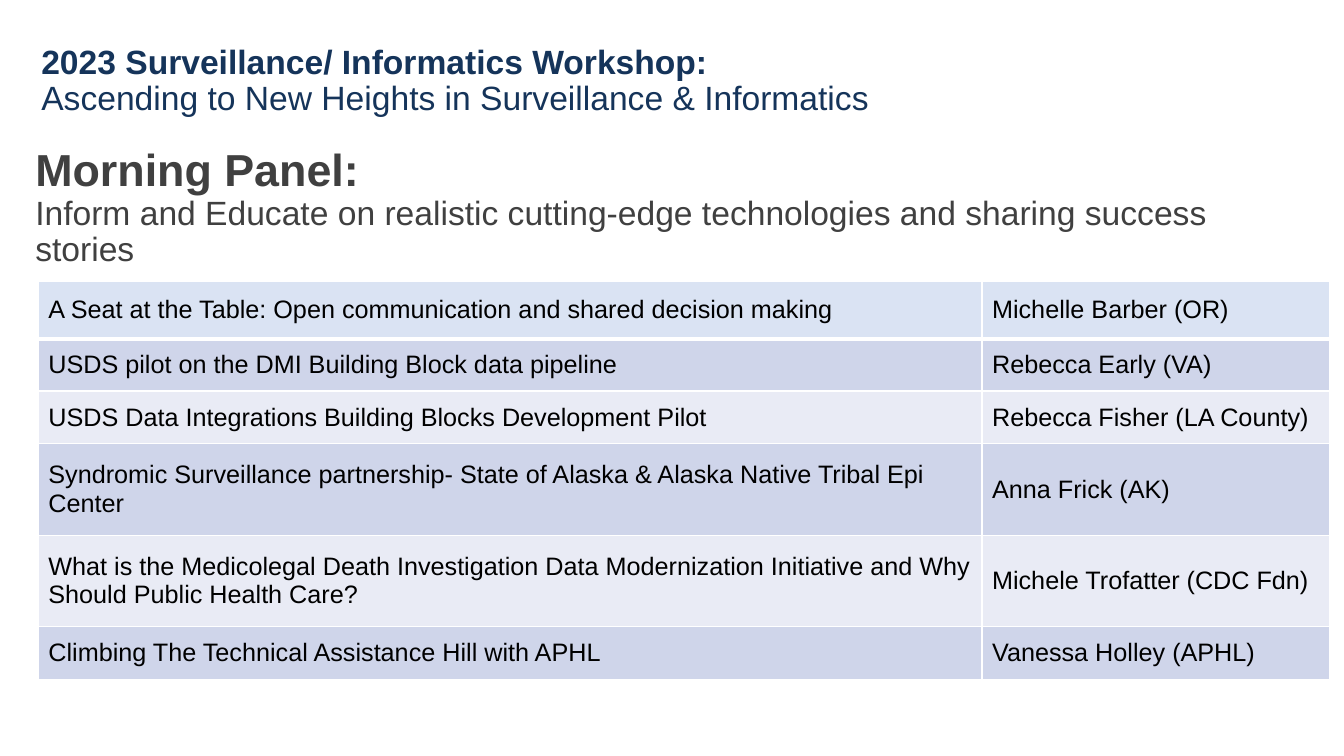
from lxml.etree import SubElement
from pptx import Presentation
from pptx.dml.color import RGBColor
from pptx.enum.text import MSO_ANCHOR, MSO_AUTO_SIZE, PP_ALIGN
from pptx.oxml.ns import qn
from pptx.util import Inches, Pt

NAVY = RGBColor(0x15, 0x34, 0x5A)
CHARCOAL = RGBColor(0x40, 0x40, 0x40)
BLACK = RGBColor(0x00, 0x00, 0x00)
WHITE = RGBColor(0xFF, 0xFF, 0xFF)
HEADER_BLUE = RGBColor(0xDA, 0xE3, 0xF3)
BAND_DARK = RGBColor(0xCF, 0xD5, 0xEA)
BAND_LIGHT = RGBColor(0xE9, 0xEB, 0xF5)

WORKSHOP = [
    ("2023 Surveillance/ Informatics Workshop:", 24, True),
    ("Ascending to New Heights in Surveillance & Informatics", 24, False),
]
PANEL = [
    ("Morning Panel:", 32, True),
    ("Inform and Educate on realistic cutting-edge technologies and sharing success stories", 24, False),
]
TALKS = [
    ("A Seat at the Table: Open communication and shared decision making", "Michelle Barber (OR)", 0.57),
    ("USDS pilot on the DMI Building Block data pipeline", "Rebecca Early (VA)", 0.52),
    ("USDS Data Integrations Building Blocks Development Pilot", "Rebecca Fisher (LA County)", 0.52),
    ("Syndromic Surveillance partnership- State of Alaska & Alaska Native Tribal Epi Center",
     "Anna Frick (AK)", 0.91),
    ("What is the Medicolegal Death Investigation Data Modernization Initiative and "
     "Why\u00a0Should\u00a0Public Health Care?".replace("\u00a0", " "), "Michele Trofatter (CDC Fdn)", 0.91),
    ("Climbing The Technical Assistance Hill with APHL", "Vanessa Holley (APHL)", 0.52),
]
COLUMN_WIDTHS = (9.36, 3.45)


def set_all(target, values):
    """Set every attribute of the target from a dict of values."""
    for name, value in values.items():
        setattr(target, name, value)


def write_lines(paragraph, lines, color):
    """Write lines into one paragraph, separated by line breaks."""
    set_all(paragraph, {"alignment": PP_ALIGN.LEFT, "line_spacing": 0.9})
    for index, (text, size, bold) in enumerate(lines):
        if index:
            paragraph.add_line_break()
        run = paragraph.add_run()
        run.text = text
        set_all(run.font, {"name": "Arial", "size": Pt(size), "bold": bold})
        run.font.color.rgb = color


def add_border(cell, side, width):
    """Draw one white border of a table cell."""
    line = SubElement(cell._tc.get_or_add_tcPr(), qn(f"a:ln{side}"), w=str(Pt(width)))
    SubElement(SubElement(line, qn("a:solidFill")), qn("a:srgbClr"), val=str(WHITE))


def add_agenda(slide):
    """Add the table of talks and speakers."""
    heights = [height for _, _, height in TALKS]
    agenda = slide.shapes.add_table(
        len(TALKS), len(COLUMN_WIDTHS), Inches(0.38), Inches(2.79),
        Inches(sum(COLUMN_WIDTHS)), Inches(sum(heights))).table
    for column, width in zip(agenda.columns, COLUMN_WIDTHS):
        column.width = Inches(width)
    for index, (talk, speaker, height) in enumerate(TALKS):
        agenda.rows[index].height = Inches(height)
        band = BAND_DARK if index % 2 else BAND_LIGHT
        for cell, text in zip(agenda.rows[index].cells, (talk, speaker)):
            set_all(cell, {"text": text, "vertical_anchor": MSO_ANCHOR.MIDDLE})
            for side in "LRTB":
                thick = (index, side) in ((0, "B"), (1, "T"))
                add_border(cell, side, 3 if thick else 1)
            cell.fill.solid()
            cell.fill.fore_color.rgb = band if index else HEADER_BLUE
            font = cell.text_frame.paragraphs[0].runs[0].font
            set_all(font, {"name": "Arial", "size": Pt(18), "bold": False})
            font.color.rgb = BLACK


def main():
    """Build the workshop panel slide."""
    deck = Presentation()
    set_all(deck, {"slide_width": Inches(13.33), "slide_height": Inches(7.5)})
    slide = deck.slides.add_slide(deck.slide_layouts[5])

    title = slide.shapes.title
    set_all(title, {"left": Inches(0.31), "top": Inches(0.38),
                    "width": Inches(10.03), "height": Inches(0.86)})
    set_all(title.text_frame, {"word_wrap": True, "auto_size": MSO_AUTO_SIZE.NONE,
                               "vertical_anchor": MSO_ANCHOR.MIDDLE})
    write_lines(title.text_frame.paragraphs[0], WORKSHOP, NAVY)

    panel = slide.shapes.add_textbox(Inches(0.31), Inches(1.45), Inches(12.72), Inches(1.3))
    set_all(panel.text_frame, {"word_wrap": True, "vertical_anchor": MSO_ANCHOR.TOP,
                               "margin_left": Inches(0.04), "margin_right": Inches(0.04),
                               "margin_top": Inches(0.02), "margin_bottom": Inches(0.02)})
    write_lines(panel.text_frame.paragraphs[0], PANEL, CHARCOAL)

    add_agenda(slide)
    deck.save("out.pptx")


if __name__ == "__main__":
    main()
